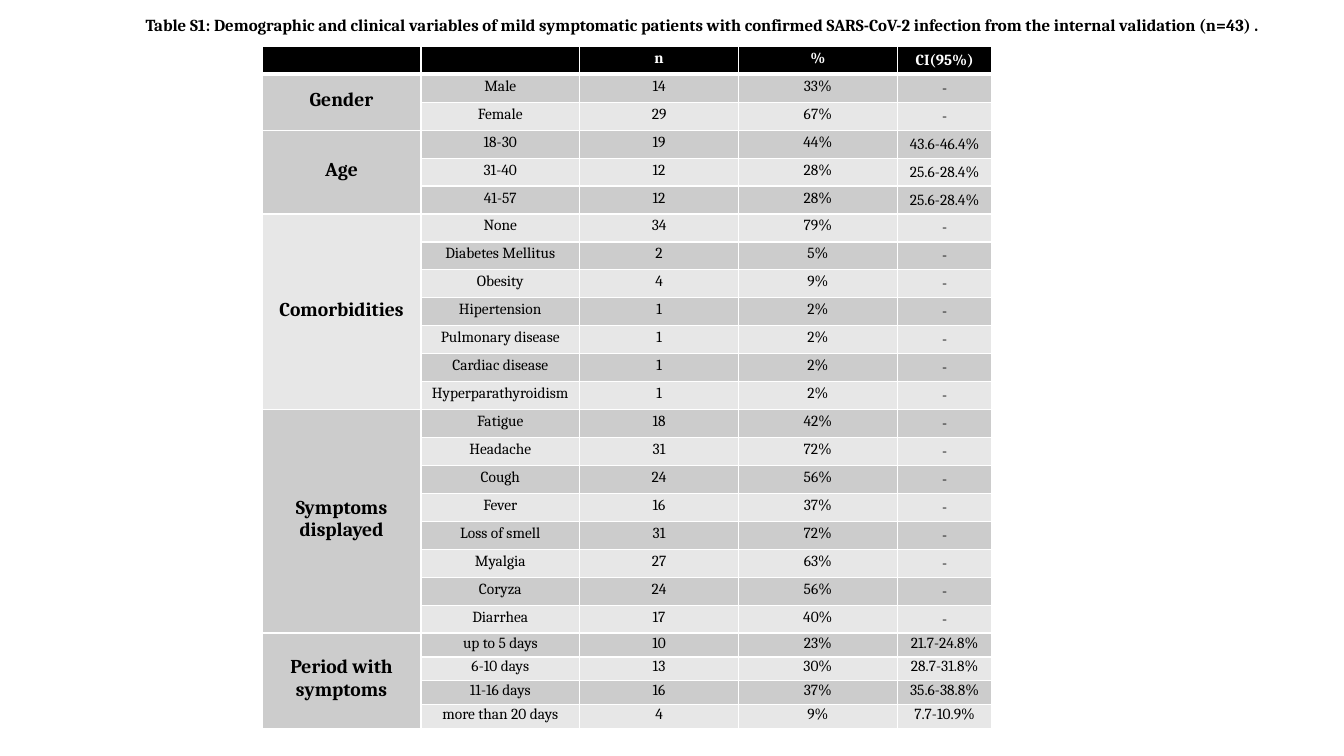
import pptx
import pptx.dml.color
import pptx.enum.text
import pptx.oxml
import pptx.util
from lxml import etree

IN, PT = pptx.util.Inches, pptx.util.Pt
NS = "http://schemas.openxmlformats.org/drawingml/2006/main"
MIDDLE = pptx.enum.text.MSO_ANCHOR.MIDDLE
BOTTOM = pptx.enum.text.MSO_ANCHOR.BOTTOM
TOP = pptx.enum.text.MSO_ANCHOR.TOP

TITLE = ("Table S1: Demographic and clinical variables of mild symptomatic patients with "
         "confirmed SARS-CoV-2 infection from the internal validation (n=43) .")
HEADER = ["", "", "n", "%", "CI(95%)"]
GROUPS = [
    ("Gender", [("Male", "14", "33%", "-"), ("Female", "29", "67%", "-")]),
    ("Age", [
        ("18-30", "19", "44%", "43.6-46.4%"),
        ("31-40", "12", "28%", "25.6-28.4%"),
        ("41-57", "12", "28%", "25.6-28.4%"),
    ]),
    ("Comorbidities", [
        ("None", "34", "79%", "-"),
        ("Diabetes Mellitus", "2", "5%", "-"),
        ("Obesity", "4", "9%", "-"),
        ("Hipertension", "1", "2%", "-"),
        ("Pulmonary disease", "1", "2%", "-"),
        ("Cardiac disease", "1", "2%", "-"),
        ("Hyperparathyroidism", "1", "2%", "-"),
    ]),
    ("Symptoms displayed", [
        ("Fatigue", "18", "42%", "-"),
        ("Headache", "31", "72%", "-"),
        ("Cough", "24", "56%", "-"),
        ("Fever", "16", "37%", "-"),
        ("Loss of smell", "31", "72%", "-"),
        ("Myalgia", "27", "63%", "-"),
        ("Coryza", "24", "56%", "-"),
        ("Diarrhea", "17", "40%", "-"),
    ]),
    ("Period with symptoms", [
        ("up to 5 days", "10", "23%", "21.7-24.8%"),
        ("6-10 days", "13", "30%", "28.7-31.8%"),
        ("11-16 days", "16", "37%", "35.6-38.8%"),
        ("more than 20 days", "4", "9%", "7.7-10.9%"),
    ]),
]


def rgb(value):
    return pptx.dml.color.RGBColor.from_string(value)


def write(p, text, size, color, bold):
    """Add one centred run, or size the empty paragraph when there is no text."""
    p.alignment = pptx.enum.text.PP_ALIGN.CENTER
    if not text:
        etree.SubElement(p._p, f"{{{NS}}}endParaRPr", sz=str(size * 100))
        return
    r = p.add_run()
    r.text = text
    r.font.name, r.font.size, r.font.bold = "Cambria", PT(size), bold
    r.font.color.rgb = rgb(color)


prs = pptx.Presentation()
prs.slide_width, prs.slide_height = IN(13.33), IN(7.5)
s = prs.slides.add_slide(prs.slide_layouts[6])

rows = [HEADER]
spans = []
for group, entries in GROUPS:
    spans.append((len(rows), len(rows) + len(entries) - 1))
    for i, entry in enumerate(entries):
        rows.append([group if i == 0 else "", *entry])

# Row heights are minimums; the text sets the final height.
period_start = spans[-1][0]
heights = [0.27 if i < period_start else 0.23 for i in range(len(rows))]
width, last_col = 7.24, 0.94
tbl = s.shapes.add_table(len(rows), len(HEADER), IN(2.6), IN(0.46),
                         IN(width), IN(sum(heights))).table
tbl.horz_banding = False
for i, col in enumerate(tbl.columns):
    col.width = IN(last_col if i == 4 else (width - last_col) / 4)

for i, values in enumerate(rows):
    tbl.rows[i].height = IN(heights[i])
    for j, text in enumerate(values):
        cell = tbl.cell(i, j)
        header, label = i == 0, j == 0
        cell.vertical_anchor = MIDDLE
        if j == 4 and header:
            cell.vertical_anchor = TOP
        elif j == 4 and i >= period_start:
            cell.vertical_anchor = BOTTOM
        if j < 4 or i >= period_start:
            cell.margin_left = cell.margin_right = cell.margin_top = IN(0.01)
            cell.margin_bottom = IN(0.05)
        write(cell.text_frame.paragraphs[0], text, 14 if label and text else 11,
              "FFFFFF" if header else "000000", header or label)
        for side in "LRTB":
            heavy = (header and side == "B") or (i == 1 and side == "T")
            cell._tc.get_or_add_tcPr().append(pptx.oxml.parse_xml(
                f'<a:ln{side} xmlns:a="{NS}" w="{PT(3 if heavy else 1)}">'
                f'<a:solidFill><a:srgbClr val="FFFFFF"/></a:solidFill></a:ln{side}>'))
        cell.fill.solid()
        cell.fill.fore_color.rgb = rgb("000000" if header else ("E7E7E7", "CCCCCC")[i % 2])

for first, last in spans:
    tbl.cell(first, 0).merge(tbl.cell(last, 0))

tf = s.shapes.add_textbox(IN(1.01), IN(0.1), IN(11.92), IN(0.3)).text_frame
tf.word_wrap = True
tf.auto_size = pptx.enum.text.MSO_AUTO_SIZE.SHAPE_TO_FIT_TEXT
write(tf.paragraphs[0], TITLE, 12, "000000", True)

prs.save("out.pptx")
